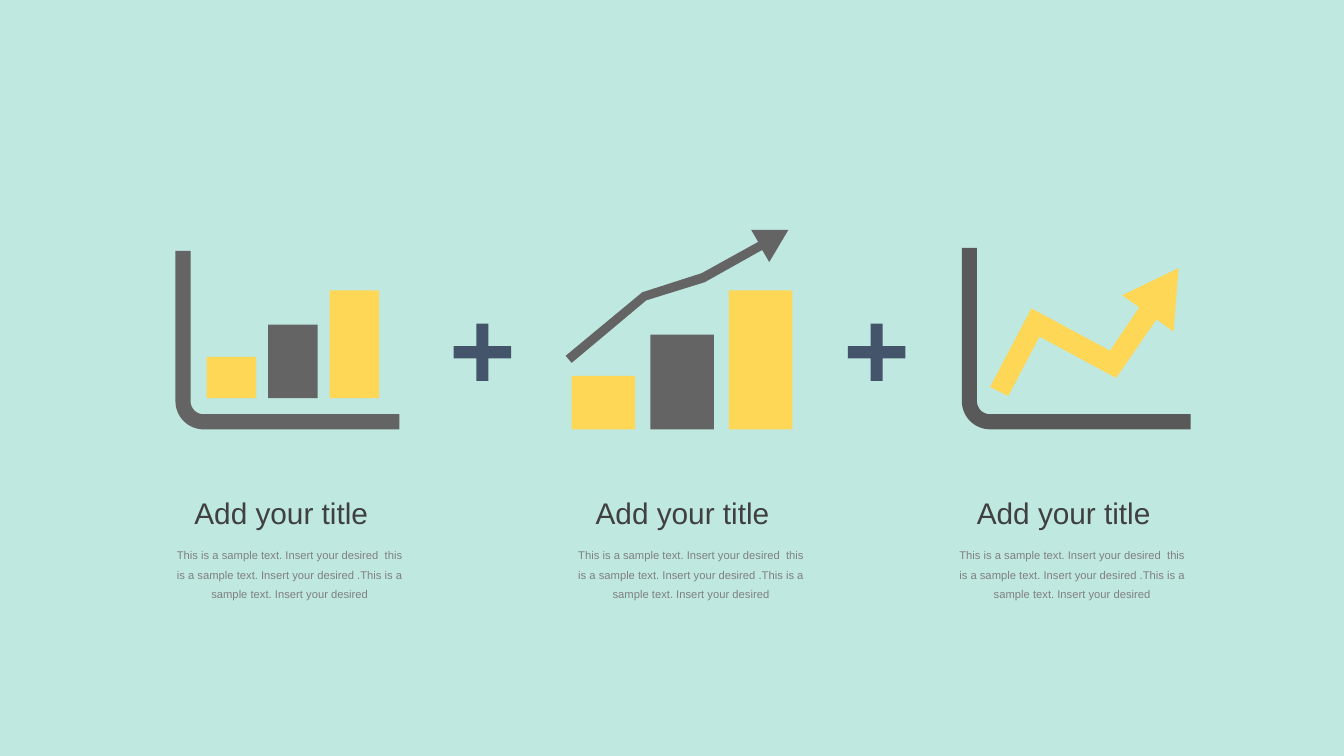
from dataclasses import dataclass
from math import cos, pi, sin

from pptx import Presentation, util as u
from pptx.dml import color
from pptx.enum import shapes, text

MINT, GOLD, GREY, DARK, NAVY = "BFE8E0", "FED756", "646464", "595959", "44546A"
FONT = "Arial"
TITLE = "Add your title"
BODY = ("This is a sample text. Insert your desired  this is a sample text. "
        "Insert your desired .This is a sample text. Insert your desired")
BASE = 4.26
Point = tuple[float, float]


@dataclass
class Bars:
    left: float
    step: float
    width: float
    base: float
    highs: tuple[float, ...]


@dataclass
class Axis:
    left: float
    top: float
    right: float
    tone: str


@dataclass
class Arrow:
    points: list[Point]
    tone: str


BARS = [
    Bars(2.05, 0.61, 0.49, 3.95, (0.41, 0.73, 1.07)),
    Bars(5.67, 0.78, 0.63, BASE, (0.53, 0.94, 1.38)),
]
AXES = [Axis(1.74, 2.49, 3.96, GREY), Axis(9.54, 2.46, 11.81, DARK)]
ARROWS = [
    Arrow([(7.82, 2.28), (7.45, 2.28), (7.52, 2.4), (6.96, 2.71),
           (6.37, 2.9), (5.61, 3.53), (5.67, 3.6), (6.41, 2.98),
           (6.99, 2.8), (7.56, 2.48), (7.63, 2.6)], GREY),
    Arrow([(11.69, 2.66), (11.13, 2.93), (11.3, 3.05), (11.01, 3.48),
           (10.23, 3.06), (9.82, 3.84), (10, 3.93), (10.31, 3.34),
           (11.07, 3.75), (11.47, 3.17), (11.64, 3.29)], GOLD),
]
TEXTS = (1.61, 5.59, 9.37)
PLUSES = (4.5, 8.41)


def rgb(tone: str) -> color.RGBColor:
    return color.RGBColor.from_string(tone)


def paint(shape, tone: str) -> None:
    shape.shadow.inherit = False
    shape.fill.solid()
    shape.fill.fore_color.rgb = rgb(tone)
    shape.line.fill.background()


def add_form(slide, kind, box: tuple[float, ...], tone: str):
    shape = slide.shapes.add_shape(kind, *map(u.Inches, box))
    paint(shape, tone)
    return shape


def add_poly(slide, points: list[Point], tone: str) -> None:
    first, *rest = [(u.Inches(x), u.Inches(y)) for x, y in points]
    pen = slide.shapes.build_freeform(*first, scale=1.0)
    pen.add_line_segments(rest, close=True)
    paint(pen.convert_to_shape(), tone)


def add_bars(slide, bars: Bars) -> None:
    for i, high in enumerate(bars.highs):
        box = (bars.left + i * bars.step, bars.base - high, bars.width, high)
        add_form(slide, shapes.MSO_SHAPE.RECTANGLE, box, (GOLD, GREY)[i % 2])


def add_axis(slide, axis: Axis) -> None:
    """Draw an L-shaped band with a rounded corner."""
    thick, outer, steps = 0.15, 0.28, 16
    mid_x, mid_y = axis.left + outer, BASE - outer

    def arc(radius: float) -> list[Point]:
        turns = [pi / 2 * (1 + i / steps) for i in range(steps + 1)]
        return [(mid_x + radius * cos(t), mid_y + radius * sin(t))
                for t in turns]

    points = [(axis.right, BASE), *arc(outer), (axis.left, axis.top),
              (axis.left + thick, axis.top), *reversed(arc(outer - thick)),
              (axis.right, BASE - thick)]
    add_poly(slide, points, axis.tone)


def add_text(slide, box: tuple[float, ...], words: str, size: float,
             tone: str, wrap: bool):
    frame = slide.shapes.add_textbox(*map(u.Inches, box)).text_frame
    frame.word_wrap = wrap
    frame.auto_size = text.MSO_AUTO_SIZE.SHAPE_TO_FIT_TEXT
    para = frame.paragraphs[0]
    run = para.add_run()
    run.text = words
    run.font.name, run.font.size = FONT, u.Pt(size)
    run.font.color.rgb = rgb(tone)
    return para


def main() -> None:
    deck = Presentation()
    deck.slide_width, deck.slide_height = u.Inches(13.33), u.Inches(7.5)
    slide = deck.slides.add_slide(deck.slide_layouts[6])

    back = add_form(slide, shapes.MSO_SHAPE.RECTANGLE, (0, 0, 13.33, 7.5), MINT)
    back.line.color.rgb = rgb(MINT)
    back.line.width = u.Pt(1)

    for bars in BARS:
        add_bars(slide, bars)
    for arrow in ARROWS:
        add_poly(slide, arrow.points, arrow.tone)
    for axis in AXES:
        add_axis(slide, axis)
    for left in TEXTS:
        add_text(slide, (left + 0.22, 4.86, 1.95, 0.46), TITLE, 21.3,
                 "404040", False)
        para = add_text(slide, (left, 5.33, 2.53, 0.69), BODY, 8,
                        "808080", True)
        para.alignment = text.PP_ALIGN.CENTER
        para.line_spacing = u.Pt(14)
    for left in PLUSES:
        plus = add_form(slide, shapes.MSO_SHAPE.CROSS,
                        (left, 3.21, 0.57, 0.57), NAVY)
        plus.adjustments[0] = 0.395

    deck.save("out.pptx")


if __name__ == "__main__":
    main()
